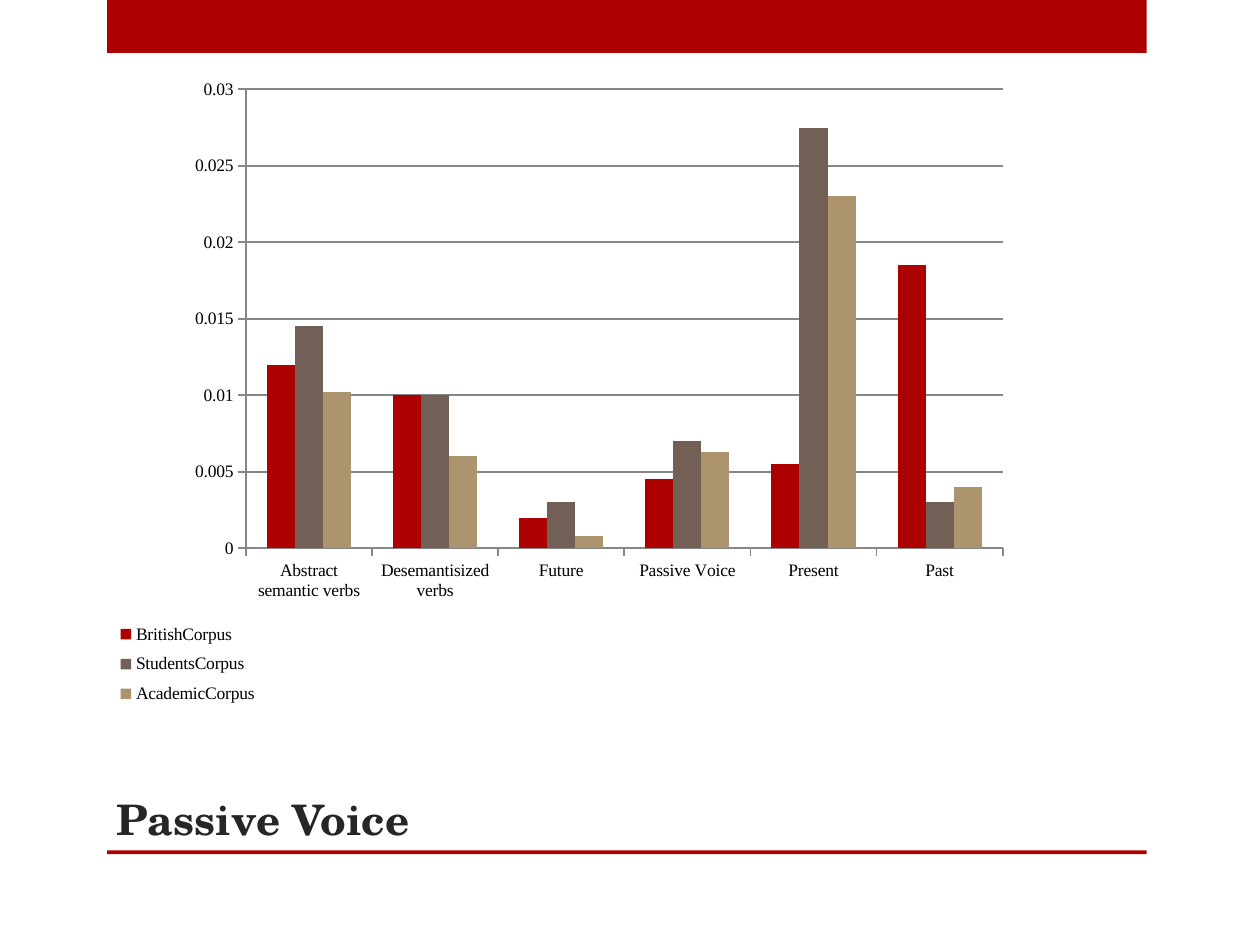
from dataclasses import dataclass

from lxml import etree
from pptx import Presentation
from pptx.chart.data import CategoryChartData
from pptx.dml.color import RGBColor
from pptx.enum.chart import XL_CHART_TYPE, XL_LEGEND_POSITION, XL_TICK_MARK
from pptx.enum.shapes import MSO_SHAPE
from pptx.enum.text import MSO_ANCHOR
from pptx.oxml.ns import qn
from pptx.util import Inches, Pt

COLUMNS = XL_CHART_TYPE.COLUMN_CLUSTERED
RIGHT = XL_LEGEND_POSITION.RIGHT
TICK_OUT, TICK_NONE = XL_TICK_MARK.OUTSIDE, XL_TICK_MARK.NONE
RECTANGLE = MSO_SHAPE.RECTANGLE
BOTTOM = MSO_ANCHOR.BOTTOM
PAGE_WIDTH, PAGE_HEIGHT = Inches(10), Inches(7.5)
GRID = 100

BAND_BOX = (8.5, 0, 82.5, 5.6)
CHART_BOX = (5.1, 5.87, 89, 70.4)
TITLE_BOX = (8.3, 83.6, 74.2, 6.4)
RULE_BOX = (8.5, 90, 82.5, 0.4)
PLOT_SHARES = {"x": 0.162, "y": 0.051, "w": 0.675, "h": 0.69}
LEGEND_SHARES = {"x": 0.04, "y": 0.84, "w": 0.14, "h": 0.15}

CATEGORIES = ("Abstract semantic verbs", "Desemantisized verbs", "Future",
              "Passive Voice", "Present", "Past")
CORPORA = {
    "BritishCorpus": (0.012, 0.01, 0.002, 0.0045, 0.0055, 0.0185),
    "StudentsCorpus": (0.0145, 0.01, 0.003, 0.007, 0.0275, 0.003),
    "AcademicCorpus": (0.0102, 0.006, 0.0008, 0.0063, 0.023, 0.004),
}


@dataclass(frozen=True)
class Theme:
    """Colours, fonts and type sizes of the deck."""
    accent: RGBColor = RGBColor(0xAD, 0x01, 0x01)
    stone: RGBColor = RGBColor(0x72, 0x60, 0x56)
    sand: RGBColor = RGBColor(0xAC, 0x95, 0x6E)
    title: RGBColor = RGBColor(0x26, 0x26, 0x26)
    label: RGBColor = RGBColor(0, 0, 0)
    grid: RGBColor = RGBColor(0x86, 0x86, 0x86)
    title_font: str = "TeX Gyre Schola"
    label_font: str = "Times New Roman"
    title_size: Pt = Pt(24)
    label_size: Pt = Pt(10)
    line_width: Pt = Pt(1)


THEME = Theme()


def place(box):
    """Turn a box in grid columns and rows into slide lengths."""
    left, top, width, height = box
    column, row = PAGE_WIDTH / GRID, PAGE_HEIGHT / GRID
    return [round(length) for length in
            (left * column, top * row, width * column, height * row)]


def set_format(target, values, color=None):
    """Set attributes from a dict, and a font or line colour if given."""
    for name, value in values.items():
        setattr(target, name, value)
    if color is not None:
        target.color.rgb = color


def add_bar(page, box):
    """Draw a plain accent bar in the box."""
    bar = page.shapes.add_shape(RECTANGLE, *place(box))
    bar.shadow.inherit = False
    bar.fill.solid()
    bar.fill.fore_color.rgb = THEME.accent
    bar.line.fill.background()


def add_title(page, box, text):
    """Write the slide title at the bottom of the box."""
    frame = page.shapes.add_textbox(*place(box)).text_frame
    set_format(frame, {"word_wrap": True, "vertical_anchor": BOTTOM})
    span = frame.paragraphs[0].add_run()
    span.text = text
    set_format(span.font, {"name": THEME.title_font, "size": THEME.title_size,
                           "bold": True}, THEME.title)


def set_layout(parent, index, shares, inner=False):
    """Fix a chart part at shares of the chart's size."""
    for old in parent.findall(qn("c:layout")):
        parent.remove(old)
    layout = etree.Element(qn("c:layout"))
    manual = etree.SubElement(layout, qn("c:manualLayout"))
    values = {"layoutTarget": "inner"} if inner else {}
    values |= {"xMode": "edge", "yMode": "edge"} | shares
    for name, value in values.items():
        etree.SubElement(manual, qn(f"c:{name}")).set("val", str(value))
    parent.insert(index, layout)


def add_corpus_chart(page, box):
    """Draw the clustered columns comparing the corpora in the box."""
    data = CategoryChartData()
    data.categories = CATEGORIES
    for name, values in CORPORA.items():
        data.add_series(name, values)
    chart = page.shapes.add_chart(COLUMNS, *place(box), data).chart
    set_format(chart, {"has_title": False, "has_legend": True})
    set_format(chart.font, {"name": THEME.label_font,
                            "size": THEME.label_size}, THEME.label)
    set_format(chart.legend, {"position": RIGHT, "include_in_layout": False})

    plot = chart.plots[0]
    set_format(plot, {"gap_width": 150, "overlap": 0,
                      "vary_by_categories": False})
    colors = (THEME.accent, THEME.stone, THEME.sand)
    for series, color in zip(plot.series, colors):
        series.format.fill.solid()
        series.format.fill.fore_color.rgb = color

    value_axis, category_axis = chart.value_axis, chart.category_axis
    set_format(value_axis, {"minimum_scale": 0, "maximum_scale": 0.03,
                            "major_unit": 0.005, "has_major_gridlines": True})
    for axis in (value_axis, category_axis):
        set_format(axis, {"major_tick_mark": TICK_OUT,
                          "minor_tick_mark": TICK_NONE})
    for part in (value_axis, category_axis, value_axis.major_gridlines):
        set_format(part.format.line, {"width": THEME.line_width}, THEME.grid)

    chart_root = chart.element
    set_layout(chart_root.find(".//" + qn("c:plotArea")), 0, PLOT_SHARES, True)
    set_layout(chart_root.find(".//" + qn("c:legend")), 1, LEGEND_SHARES)


def main():
    """Build the deck and save it."""
    deck = Presentation()
    set_format(deck, {"slide_width": PAGE_WIDTH, "slide_height": PAGE_HEIGHT})
    page = deck.slides.add_slide(deck.slide_layouts[6])
    for box in (BAND_BOX, RULE_BOX):
        add_bar(page, box)
    add_title(page, TITLE_BOX, "Passive Voice")
    add_corpus_chart(page, CHART_BOX)
    deck.save("out.pptx")


if __name__ == "__main__":
    main()
